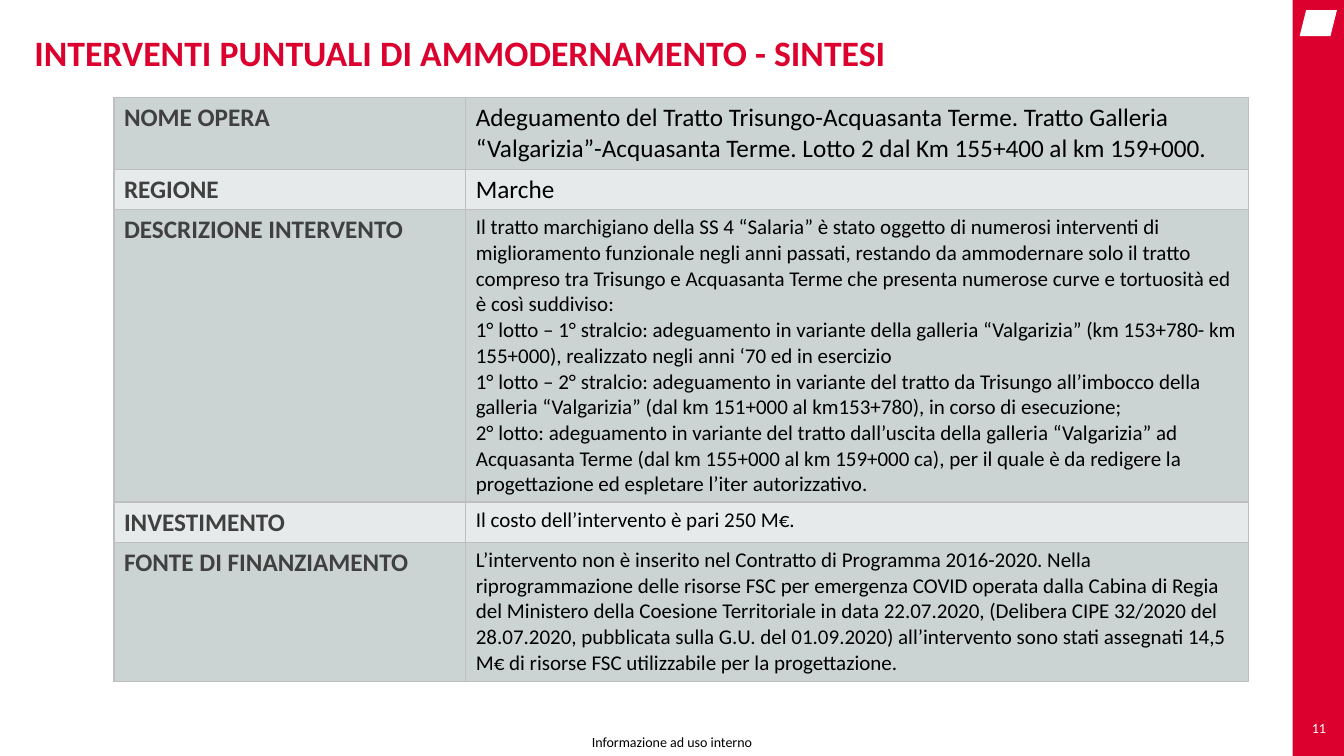
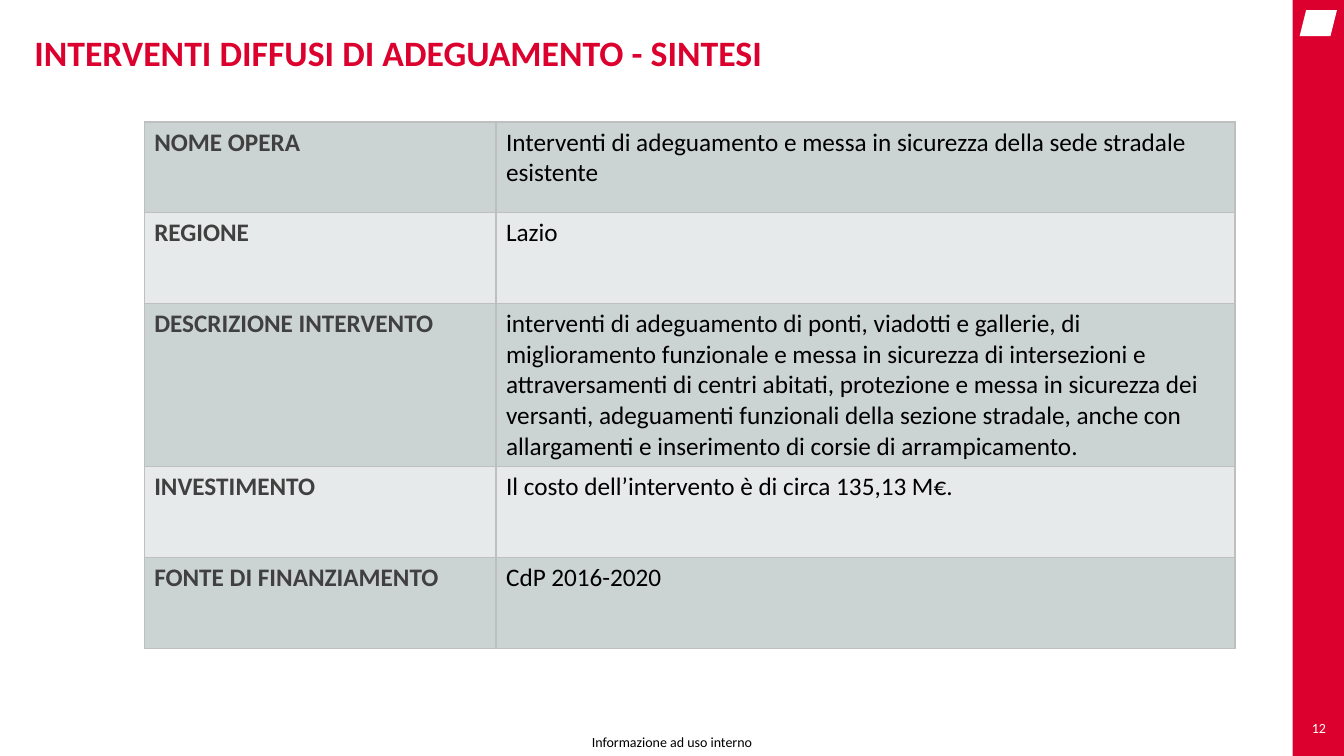
from dataclasses import dataclass

import pptx
import pptx.dml.color
import pptx.enum.shapes
import pptx.enum.text
import pptx.oxml
import pptx.oxml.ns
import pptx.util

Inches = pptx.util.Inches
Pt = pptx.util.Pt
ALIGN = pptx.enum.text.PP_ALIGN
ANCHOR = pptx.enum.text.MSO_ANCHOR
SHAPE = pptx.enum.shapes.MSO_SHAPE


@dataclass(frozen=True)
class Theme:
    font: str = "Calibri"
    red: str = "DC002E"
    white: str = "FFFFFF"
    black: str = "000000"
    gray: str = "404040"
    rule: str = "BFBFBF"
    bands: tuple = ("CCD3D3", "E7EAEA")
    head: float = 25.5
    large: float = 18
    body: float = 15
    small: float = 10


@dataclass(frozen=True)
class Row:
    label: str
    paras: tuple
    height: float
    size: float = Theme.large


@dataclass(frozen=True)
class Page:
    number: int
    title: str
    left: float
    top: float
    wide: float
    rows: tuple


THEME = Theme()
LABEL_WIDE = 3.49
BAND_LEFT = 12.82
BAND_WIDE = 0.52

PAGES = (
    Page(11, "INTERVENTI PUNTUALI DI AMMODERNAMENTO - SINTESI", 1.13, 0.97, 7.76, (
        Row("NOME OPERA", (
            "Adeguamento del Tratto Trisungo-Acquasanta Terme. Tratto Galleria "
            "“Valgarizia”-Acquasanta Terme. Lotto 2 dal Km 155+400 al km 159+000.",
        ), 0.71),
        Row("REGIONE", ("Marche",), 0.4),
        Row("DESCRIZIONE INTERVENTO", (
            "Il tratto marchigiano della SS 4 “Salaria” è stato oggetto di numerosi "
            "interventi di miglioramento funzionale negli anni passati, restando da "
            "ammodernare solo il tratto compreso tra Trisungo e Acquasanta Terme che "
            "presenta numerose curve e tortuosità ed è così suddiviso:",
            "1° lotto – 1° stralcio: adeguamento in variante della galleria “Valgarizia” "
            "(km 153+780- km 155+000), realizzato negli anni ‘70 ed in esercizio",
            "1° lotto – 2° stralcio: adeguamento in variante del tratto da Trisungo "
            "all’imbocco della galleria “Valgarizia” (dal km 151+000 al km153+780), "
            "in corso di esecuzione;",
            "2° lotto: adeguamento in variante del tratto dall’uscita della galleria "
            "“Valgarizia” ad Acquasanta Terme (dal km 155+000 al km 159+000 ca), per il "
            "quale è da redigere la progettazione ed espletare l’iter autorizzativo.",
        ), 2.9, THEME.body),
        Row("INVESTIMENTO", ("Il costo dell’intervento è pari 250 M€.",), 0.4, THEME.body),
        Row("FONTE DI FINANZIAMENTO", (
            "L’intervento non è inserito nel Contratto di Programma 2016-2020. Nella "
            "riprogrammazione delle risorse FSC per emergenza COVID operata dalla Cabina "
            "di Regia del Ministero della Coesione Territoriale in data 22.07.2020, "
            "(Delibera CIPE 32/2020 del 28.07.2020, pubblicata sulla G.U. del 01.09.2020) "
            "all’intervento sono stati assegnati 14,5 M€ di risorse FSC utilizzabile per "
            "la progettazione.",
        ), 1.38, THEME.body),
    )),
    Page(12, "INTERVENTI DIFFUSI DI ADEGUAMENTO - SINTESI", 1.43, 1.21, 7.33, (
        Row("NOME OPERA", (
            "Interventi di adeguamento e messa in sicurezza della sede stradale esistente",
        ), 0.9),
        Row("REGIONE", ("Lazio",), 0.9),
        Row("DESCRIZIONE INTERVENTO", (
            "interventi di adeguamento di ponti, viadotti e gallerie, di miglioramento "
            "funzionale e messa in sicurezza di intersezioni e attraversamenti di centri "
            "abitati, protezione e messa in sicurezza dei versanti, adeguamenti funzionali "
            "della sezione stradale, anche con allargamenti e inserimento di corsie di "
            "arrampicamento.",
        ), 1.62),
        Row("INVESTIMENTO", ("Il costo dell’intervento è di circa 135,13 M€.",), 0.9),
        Row("FONTE DI FINANZIAMENTO", ("CdP 2016-2020",), 0.9),
    )),
)


def rgb(color: str) -> pptx.dml.color.RGBColor:
    return pptx.dml.color.RGBColor.from_string(color)


def write(frame, *paras: str, size: float, color: str = THEME.black,
          bold: bool = False, align=ALIGN.LEFT, space: float = 1) -> None:
    """Fill a text frame with equally formatted paragraphs."""
    for i, text in enumerate(paras):
        para = frame.paragraphs[0] if i == 0 else frame.add_paragraph()
        para.alignment = align
        para.line_spacing = space
        run = para.add_run()
        run.text = text
        run.font.name = THEME.font
        run.font.size = Pt(size)
        run.font.bold = bold
        run.font.color.rgb = rgb(color)


def add_block(slide, kind, box: tuple, color: str) -> None:
    shape = slide.shapes.add_shape(kind, *map(Inches, box))
    shape.shadow.inherit = False
    shape.fill.solid()
    shape.fill.fore_color.rgb = rgb(color)
    shape.line.fill.background()


def add_note(slide, text: str, box: tuple, color: str) -> None:
    """Add a small centred line of text without margins."""
    frame = slide.shapes.add_textbox(*map(Inches, box)).text_frame
    frame.margin_left = frame.margin_right = frame.margin_top = frame.margin_bottom = 0
    frame.word_wrap = True
    frame.vertical_anchor = ANCHOR.MIDDLE
    write(frame, text, size=THEME.small, color=color, align=ALIGN.CENTER)


def add_frame(slide, page: Page) -> None:
    """Draw the title, side band, emblem, page number and footer."""
    add_block(slide, SHAPE.RECTANGLE, (BAND_LEFT, 0, BAND_WIDE, 7.5), THEME.red)
    add_block(slide, SHAPE.PARALLELOGRAM, (12.89, 0.1, 0.37, 0.26), THEME.white)
    add_note(slide, str(page.number), (BAND_LEFT, 7.1, BAND_WIDE, 0.25), THEME.white)
    add_note(slide, "Informazione ad uso interno", (5.7, 7.27, 1.93, 0.18), THEME.black)

    title = slide.shapes.title
    title.left, title.top, title.width, title.height = map(Inches, (0.34, 0.3, 12.44, 0.49))
    frame = title.text_frame
    frame.auto_size = pptx.enum.text.MSO_AUTO_SIZE.NONE
    frame.word_wrap = True
    frame.vertical_anchor = ANCHOR.BOTTOM
    frame.margin_left = 0
    frame.margin_right = Inches(0.1)
    frame.margin_top = frame.margin_bottom = Inches(0.05)
    write(frame, page.title, size=THEME.head, color=THEME.red, bold=True, space=0.9)


def style_cell(cell, color: str) -> None:
    """Set the fill and a thin rule on all four sides."""
    cell.fill.solid()
    cell.fill.fore_color.rgb = rgb(color)
    props = cell._tc.get_or_add_tcPr()
    for i, side in enumerate(("lnL", "lnR", "lnT", "lnB")):
        props.insert(i, pptx.oxml.parse_xml(
            f'<a:{side} {pptx.oxml.ns.nsdecls("a")} w="{Pt(1)}"><a:solidFill>'
            f'<a:srgbClr val="{THEME.rule}"/></a:solidFill></a:{side}>'))


def add_grid(slide, page: Page) -> None:
    box = (page.left, page.top, LABEL_WIDE + page.wide, sum(r.height for r in page.rows))
    table = slide.shapes.add_table(len(page.rows), 2, *map(Inches, box)).table
    table.first_row = table.horz_banding = False
    for col, wide in zip(table.columns, (LABEL_WIDE, page.wide)):
        col.width = Inches(wide)
    for i, row in enumerate(page.rows):
        table.rows[i].height = Inches(row.height)
        label, value = table.cell(i, 0), table.cell(i, 1)
        for cell in (label, value):
            style_cell(cell, THEME.bands[i % 2])
        write(label.text_frame, row.label, size=THEME.large, color=THEME.gray, bold=True)
        write(value.text_frame, *row.paras, size=row.size)


def main() -> None:
    deck = pptx.Presentation()
    deck.slide_width, deck.slide_height = Inches(13.33), Inches(7.5)
    for page in PAGES:
        slide = deck.slides.add_slide(deck.slide_layouts[5])
        add_frame(slide, page)
        add_grid(slide, page)
    deck.save("out.pptx")


if __name__ == "__main__":
    main()
